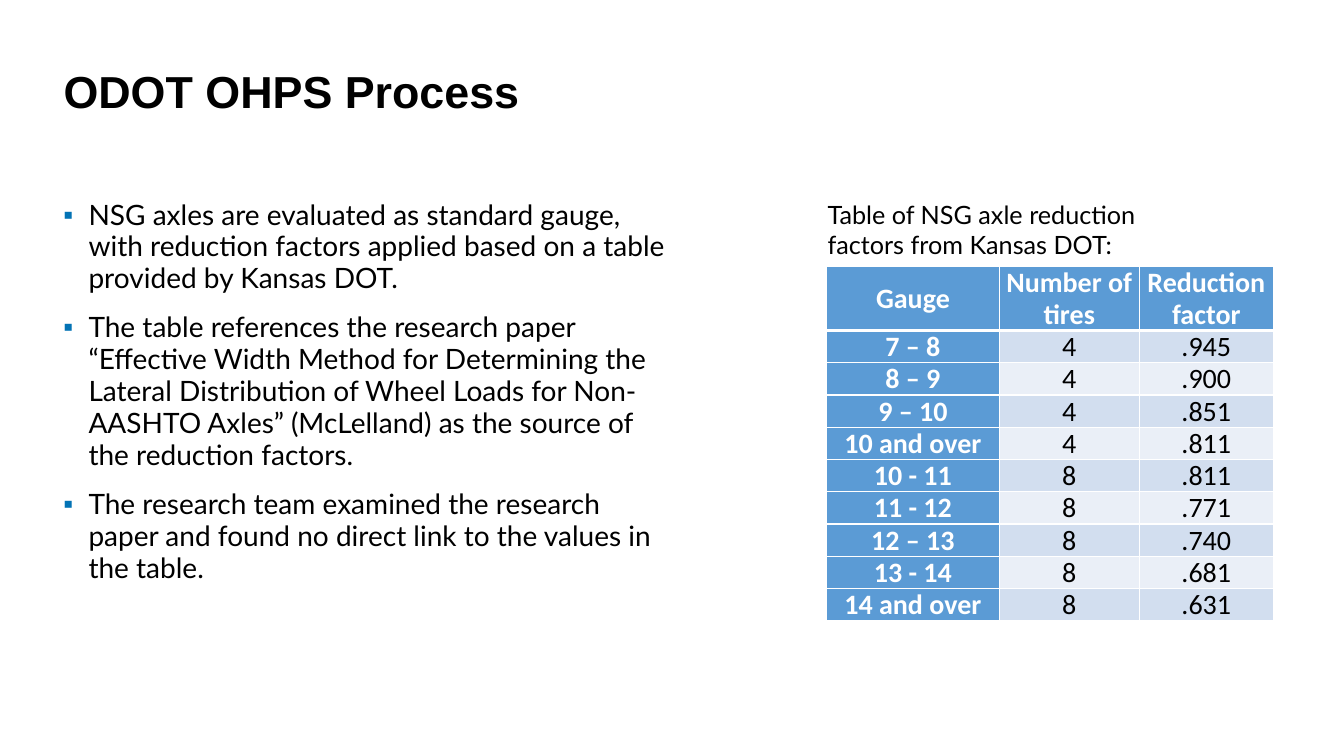
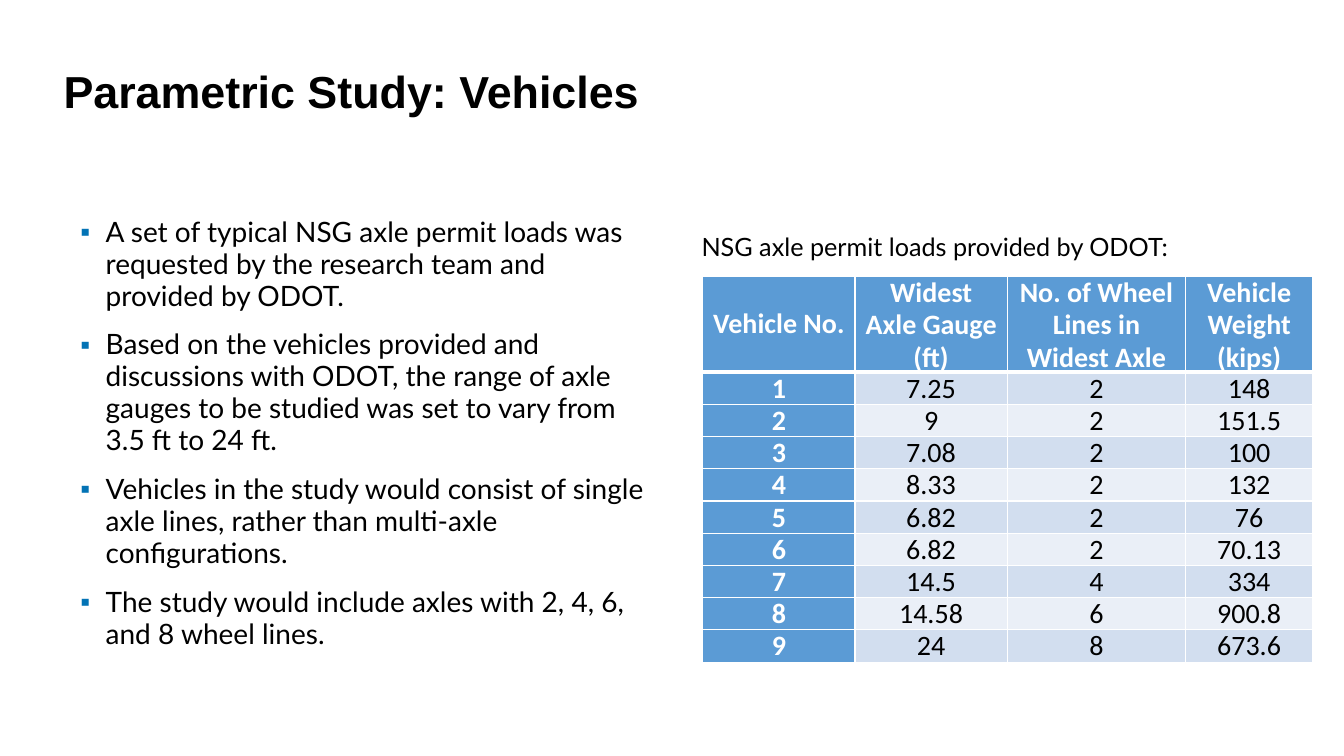
"""Build two slides on non-standard gauge axles, each with bullets and a table."""
from lxml import etree
from pptx import Presentation
from pptx.dml.color import RGBColor
from pptx.enum.text import MSO_ANCHOR, MSO_AUTO_SIZE, PP_ALIGN
from pptx.oxml.ns import qn
from pptx.util import Pt

PX = 9144
BLACK = RGBColor(0x00, 0x00, 0x00)
WHITE = RGBColor(0xFF, 0xFF, 0xFF)
HEADER_BLUE = RGBColor(0x5B, 0x9B, 0xD5)
BAND_DARK = RGBColor(0xD2, 0xDE, 0xEF)
BAND_LIGHT = RGBColor(0xEA, 0xEF, 0xF7)
BULLET_BLUE = RGBColor(0x03, 0x73, 0xB5)
LEFT, CENTER = PP_ALIGN.LEFT, PP_ALIGN.CENTER
MIDDLE = MSO_ANCHOR.MIDDLE
NO_FIT = MSO_AUTO_SIZE.NONE

TITLE_BOX = (53, 67, 1150, 53)
TITLE = {"name": "Arial", "size": Pt(32), "bold": True}
BODY = {"name": "Lato", "size": Pt(20), "bold": False}
CAPTION = {"name": "Lato", "size": Pt(18), "bold": False}
CELL = {"name": "Calibri", "size": Pt(20), "bold": False}
HEADING = {**CELL, "bold": True}
CELL_MARGINS = {"margin_left": 7 * PX, "margin_right": 7 * PX,
                "margin_top": 0, "margin_bottom": 0}
BULLET_INDENT = 25
ROW_HEIGHT = 32

SLIDES = [
    {
        "title": "ODOT OHPS Process",
        "bullets_box": (53, 193, 623, 533),
        "bullets": [
            "NSG axles are evaluated as standard gauge, with reduction factors "
            "applied based on a table provided by Kansas DOT.",
            "The table references the research paper “Effective Width Method for "
            "Determining the Lateral Distribution of Wheel Loads for Non-AASHTO "
            "Axles” (McLelland) as the source of the reduction factors.",
            "The research team examined the research paper and found no direct "
            "link to the values in the table.",
        ],
        "caption_box": (811, 193, 391, 71),
        "caption": "Table of NSG axle reduction factors from Kansas DOT:",
        "table_at": (820, 264),
        "columns": [171, 139, 133],
        "header_height": 64,
        "rows": [
            ("Gauge", "Number of tires", "Reduction factor"),
            ("7 – 8", "4", ".945"),
            ("8 – 9", "4", ".900"),
            ("9 – 10", "4", ".851"),
            ("10 and over", "4", ".811"),
            ("10 - 11", "8", ".811"),
            ("11 - 12", "8", ".771"),
            ("12 – 13", "8", ".740"),
            ("13 - 14", "8", ".681"),
            ("14 and over", "8", ".631"),
        ],
    },
    {
        "title": "Parametric Study: Vehicles",
        "bullets_box": (70, 210, 584, 533),
        "bullets": [
            "A set of typical NSG axle permit loads was requested by the research "
            "team and provided by ODOT.",
            "Based on the vehicles provided and discussions with ODOT, the range "
            "of axle gauges to be studied was set to vary from 3.5 ft to 24 ft.",
            "Vehicles in the study would consist of single axle lines, rather "
            "than multi-axle configurations.",
            "The study would include axles with 2, 4, 6, and 8 wheel lines.",
        ],
        "caption_box": (686, 225, 526, 40),
        "caption": "NSG axle permit loads provided by ODOT:",
        "table_at": (697, 274),
        "columns": [151, 151, 177, 126],
        "header_height": 95,
        "rows": [
            ("Vehicle No.", "Widest Axle Gauge (ft)",
             "No. of Wheel Lines in Widest Axle", "Vehicle Weight (kips)"),
            ("1", "7.25", "2", "148"),
            ("2", "9", "2", "151.5"),
            ("3", "7.08", "2", "100"),
            ("4", "8.33", "2", "132"),
            ("5", "6.82", "2", "76"),
            ("6", "6.82", "2", "70.13"),
            ("7", "14.5", "4", "334"),
            ("8", "14.58", "6", "900.8"),
            ("9", "24", "8", "673.6"),
        ],
    },
]


def write(paragraph, text, style, color=BLACK, align=LEFT, spacing=1.0):
    paragraph.text = text
    paragraph.alignment = align
    paragraph.line_spacing = spacing
    for key, value in style.items():
        setattr(paragraph.font, key, value)
    paragraph.font.color.rgb = color


def add_border(cell, side, points):
    line = etree.SubElement(cell._tc.get_or_add_tcPr(), qn(f"a:ln{side}"), w=str(Pt(points)))
    fill = etree.SubElement(line, qn("a:solidFill"))
    etree.SubElement(fill, qn("a:srgbClr"), val=str(WHITE))


deck = Presentation()
deck.slide_width, deck.slide_height = 1333 * PX, 750 * PX

for content in SLIDES:
    slide = deck.slides.add_slide(deck.slide_layouts[5])
    title = slide.shapes.title
    title.left, title.top, title.width, title.height = [v * PX for v in TITLE_BOX]
    title.text_frame.vertical_anchor = MIDDLE
    title.text_frame.auto_size = NO_FIT
    write(title.text_frame.paragraphs[0], content["title"], TITLE, spacing=0.9)

    bullets = slide.shapes.add_textbox(*[v * PX for v in content["bullets_box"]]).text_frame
    bullets.word_wrap = True
    for index, text in enumerate(content["bullets"]):
        paragraph = bullets.add_paragraph() if index else bullets.paragraphs[0]
        properties = paragraph._p.get_or_add_pPr()
        properties.set("marL", str(BULLET_INDENT * PX))
        properties.set("indent", str(-BULLET_INDENT * PX))
        bullet_color = etree.SubElement(properties, qn("a:buClr"))
        etree.SubElement(bullet_color, qn("a:srgbClr"), val=str(BULLET_BLUE))
        etree.SubElement(properties, qn("a:buFont"), typeface="Arial")
        etree.SubElement(properties, qn("a:buChar"), char="▪")
        write(paragraph, text, BODY, spacing=0.95)
        paragraph.space_before = Pt(6 if index else 0)
        paragraph.space_after = Pt(6)

    caption = slide.shapes.add_textbox(*[v * PX for v in content["caption_box"]]).text_frame
    caption.word_wrap = True
    write(caption.paragraphs[0], content["caption"], CAPTION)

    rows, columns = content["rows"], content["columns"]
    heights = [content["header_height"]] + [ROW_HEIGHT] * (len(rows) - 1)
    left, top = content["table_at"]
    table = slide.shapes.add_table(len(rows), len(columns), left * PX, top * PX,
                                   sum(columns) * PX, sum(heights) * PX).table
    table.first_col = True
    for column, width in zip(table.columns, columns):
        column.width = width * PX
    for row_index, values in enumerate(rows):
        table.rows[row_index].height = heights[row_index] * PX
        band = BAND_DARK if row_index % 2 else BAND_LIGHT
        for column_index, value in enumerate(values):
            cell = table.cell(row_index, column_index)
            heading = row_index == 0 or column_index == 0
            for key, margin in CELL_MARGINS.items():
                setattr(cell, key, margin)
            cell.vertical_anchor = MIDDLE
            add_border(cell, "L", 1)
            add_border(cell, "R", 1)
            add_border(cell, "T", 3 if row_index == 1 else 1)
            add_border(cell, "B", 3 if row_index == 0 else 1)
            cell.fill.solid()
            cell.fill.fore_color.rgb = HEADER_BLUE if heading else band
            write(cell.text_frame.paragraphs[0], value, HEADING if heading else CELL,
                  WHITE if heading else BLACK, CENTER, 0.95)

deck.save("out.pptx")
